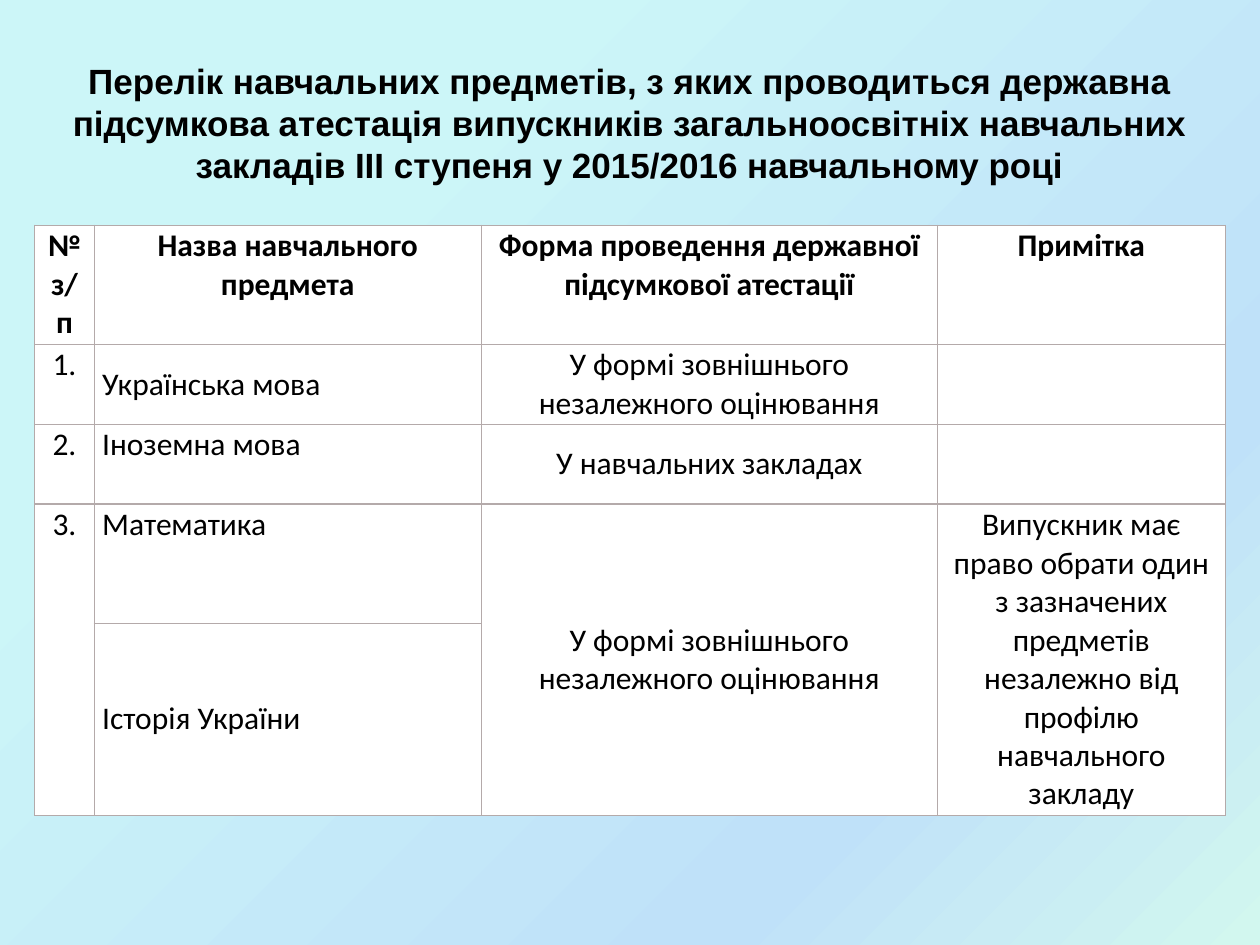
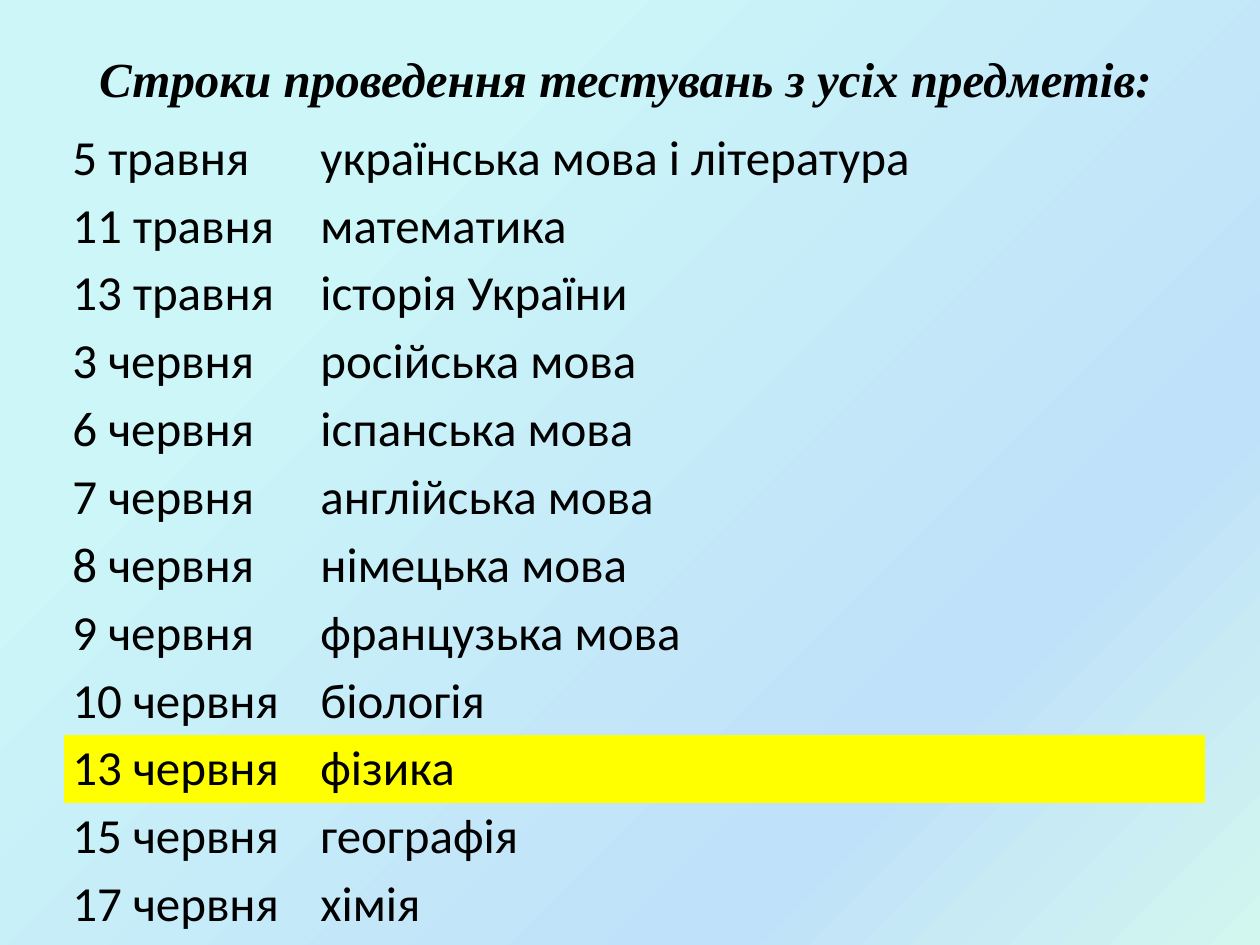
import copy

import lxml.etree
import pptx
import pptx.dml.color
import pptx.enum.text
import pptx.oxml.ns
import pptx.util

Cm = pptx.util.Cm
Pt = pptx.util.Pt
RGBColor = pptx.dml.color.RGBColor
ALIGN = pptx.enum.text.PP_ALIGN
ANCHOR = pptx.enum.text.MSO_ANCHOR
qn = pptx.oxml.ns.qn

# Shared look
BLACK = RGBColor(0x00, 0x00, 0x00)
WHITE = RGBColor(0xFF, 0xFF, 0xFF)
YELLOW = RGBColor(0xFF, 0xFF, 0x00)
GREY = RGBColor(0xB4, 0xAA, 0xAA)
AQUA = RGBColor(0xCC, 0xF6, 0xF8)
SKY = RGBColor(0xBF, 0xE1, 0xF9)
MINT = RGBColor(0xD2, 0xF7, 0xEF)
STOPS = [(0.25, AQUA), (0.75, SKY), (1.0, MINT)]
BODY = "Calibri"
PLAIN = "{2D5ABB26-0587-4C30-8999-92F81FD0307C}"

# Exam list: the last two subjects share their other cells
HEADS = ["№ з/п", "Назва навчального предмета",
         "Форма проведення державної підсумкової атестації", "Примітка"]
OUTER = "У формі зовнішнього незалежного оцінювання"
NOTE = ("Випускник має право обрати один з зазначених предметів "
        "незалежно від профілю навчального закладу")
EXAMS = [
    HEADS,
    ["1.", "Українська мова", OUTER, ""],
    ["2.", "Іноземна мова", "У навчальних закладах", ""],
    ["3.", "Математика", OUTER, NOTE],
    ["", "Історія України", "", ""],
]
TOP_SET = ("Іноземна мова", "Математика")

# Test dates
DATES = [
    ("5 травня", "українська мова і література"),
    ("11 травня", "математика"),
    ("13 травня", "історія України"),
    ("3 червня", "російська мова"),
    ("6 червня", "іспанська мова"),
    ("7 червня", "англійська мова"),
    ("8 червня", "німецька мова"),
    ("9 червня", "французька мова"),
    ("10 червня", "біологія"),
    ("13 червня", "фізика"),
    ("15 червня", "географія"),
    ("17 червня", "хімія"),
]
MARKED = "фізика"


def paint_back(master):
    """Diagonal gradient behind every slide."""
    fill = master.background.fill
    fill.gradient()
    fill.gradient_angle = 315
    stops = master.element.find(".//" + qn("a:gsLst"))
    stops.append(copy.deepcopy(stops[-1]))
    for stop, (place, color) in zip(fill.gradient_stops, STOPS):
        stop.position = place
        stop.color.rgb = color


def style(para, font, size, bold=False, italic=False):
    para.font.name = font
    para.font.size = Pt(size)
    para.font.bold = bold
    para.font.italic = italic
    para.font.color.rgb = BLACK


def add_title(slide, text, box, font, size, italic=False):
    title = slide.shapes.title
    title.left, title.top, title.width, title.height = map(Cm, box)
    frame = title.text_frame
    frame.text = text
    frame.word_wrap = True
    frame.auto_size = pptx.enum.text.MSO_AUTO_SIZE.NONE
    frame.vertical_anchor = ANCHOR.MIDDLE
    para = frame.paragraphs[0]
    para.alignment = ALIGN.CENTER
    style(para, font, size, True, italic)
    return frame


def add_grid(slide, left, top, cols, rows):
    """Plain table without style; sizes in centimetres."""
    table = slide.shapes.add_table(
        len(rows), len(cols), Cm(left), Cm(top),
        Cm(sum(cols)), Cm(sum(rows))).table
    table.first_row = table.horz_banding = False
    table._tbl.tblPr.find(qn("a:tableStyleId")).text = PLAIN
    for col, width in zip(table.columns, cols):
        col.width = Cm(width)
    for row, height in zip(table.rows, rows):
        row.height = Cm(height)
    return table


def set_cell(cell, text, size, pad, fill=None, bold=False,
             align=ALIGN.LEFT, anchor=ANCHOR.MIDDLE):
    cell.text_frame.text = text
    cell.margin_left = cell.margin_right = Cm(0.16)
    cell.margin_top = cell.margin_bottom = Cm(pad)
    cell.vertical_anchor = anchor
    para = cell.text_frame.paragraphs[0]
    para.alignment = align
    style(para, BODY, size, bold)
    if fill is None:
        cell.fill.background()
    else:
        cell.fill.solid()
        cell.fill.fore_color.rgb = fill


def add_edges(cell):
    """Thin grey line on all four sides; goes in before the fill."""
    props = cell._tc.get_or_add_tcPr()
    for side in ("lnL", "lnR", "lnT", "lnB"):
        line = lxml.etree.SubElement(props, qn("a:" + side), w=str(Pt(0.75)))
        solid = lxml.etree.SubElement(line, qn("a:solidFill"))
        lxml.etree.SubElement(solid, qn("a:srgbClr"), val=str(GREY))


def fill_exams(table):
    for r, row in enumerate(EXAMS):
        for c, text in enumerate(row):
            cell = table.cell(r, c)
            high = r == 0 or c == 0 or text in TOP_SET
            add_edges(cell)
            set_cell(cell, text, 18, 0.03, WHITE, bold=r == 0,
                     align=ALIGN.LEFT if r and c == 1 else ALIGN.CENTER,
                     anchor=ANCHOR.TOP if high else ANCHOR.MIDDLE)
    for c in (0, 2, 3):
        table.cell(3, c).merge(table.cell(4, c))


def fill_dates(table):
    for r, row in enumerate(DATES):
        fill = YELLOW if row[1] == MARKED else None
        for c, text in enumerate(row):
            set_cell(table.cell(r, c), text, 28, 0.08, fill)


def main():
    deck = pptx.Presentation()
    deck.slide_width, deck.slide_height = Cm(25.4), Cm(19.05)
    paint_back(deck.slide_master)
    layout = deck.slide_layouts[5]

    # Slide 1: subjects and form of the exam
    slide = deck.slides.add_slide(layout)
    frame = add_title(
        slide,
        "Перелік навчальних предметів, з яких проводиться державна "
        "підсумкова атестація випускників загальноосвітніх навчальних "
        "закладів III ступеня у 2015/2016 навчальному році",
        (0.3, 0.89, 24.79, 2.87), "Arial", 20)
    frame.margin_left = frame.margin_right = frame.margin_bottom = 0
    frame.margin_top = Cm(0.3)
    fill_exams(add_grid(slide, 0.7, 4.54, [1.2, 7.8, 9.2, 5.8],
                        [2.4, 1.61, 1.61, 2.4, 3.87]))

    # Slide 2: dates of the tests
    slide = deck.slides.add_slide(layout)
    add_title(slide, "Строки проведення тестувань з усіх предметів:",
              (0.1, 0.84, 25.02, 1.45), "Times New Roman", 28, True)
    fill_dates(add_grid(slide, 1.3, 2.51, [5, 18], [1.33] * len(DATES)))

    deck.save("out.pptx")


if __name__ == "__main__":
    main()
